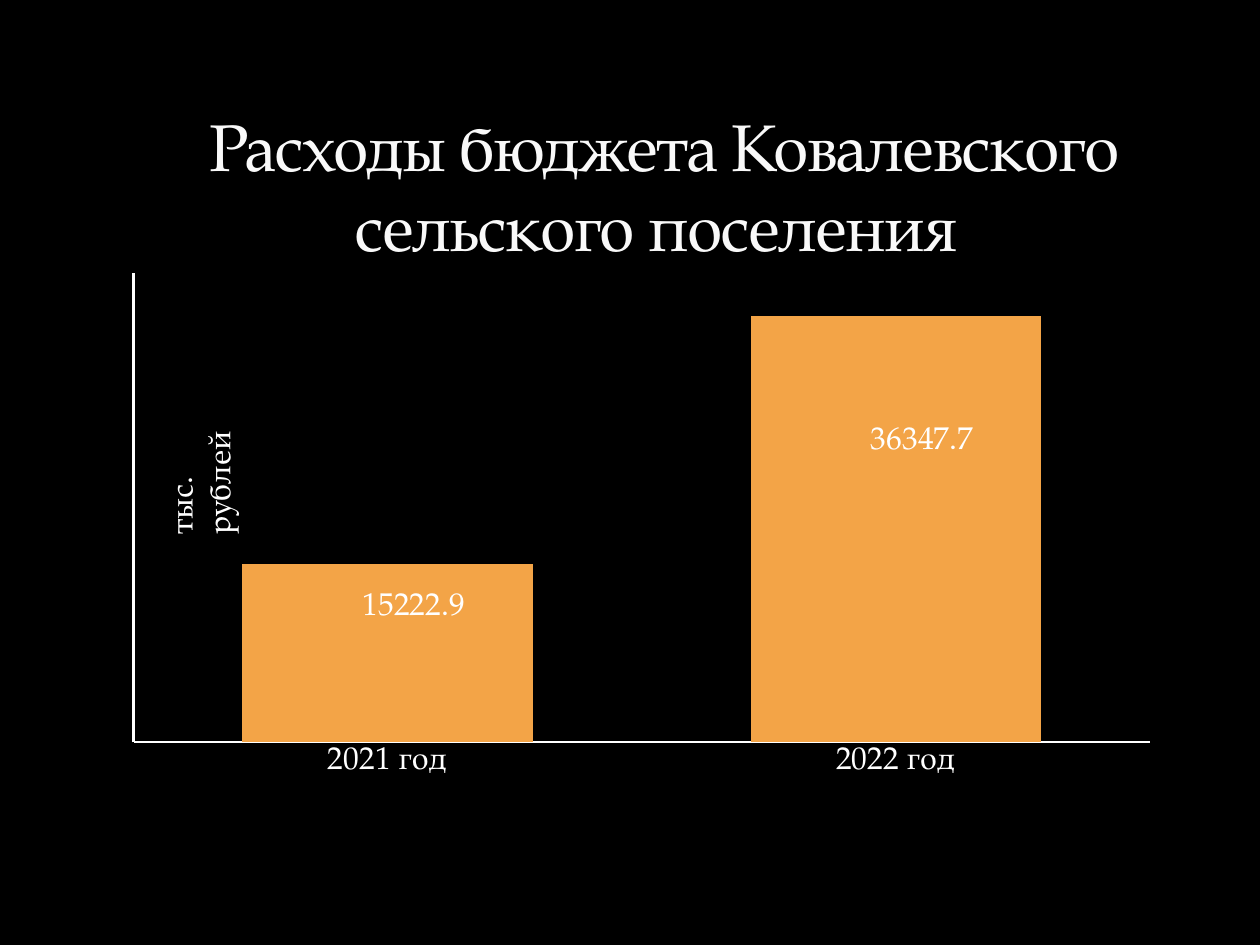
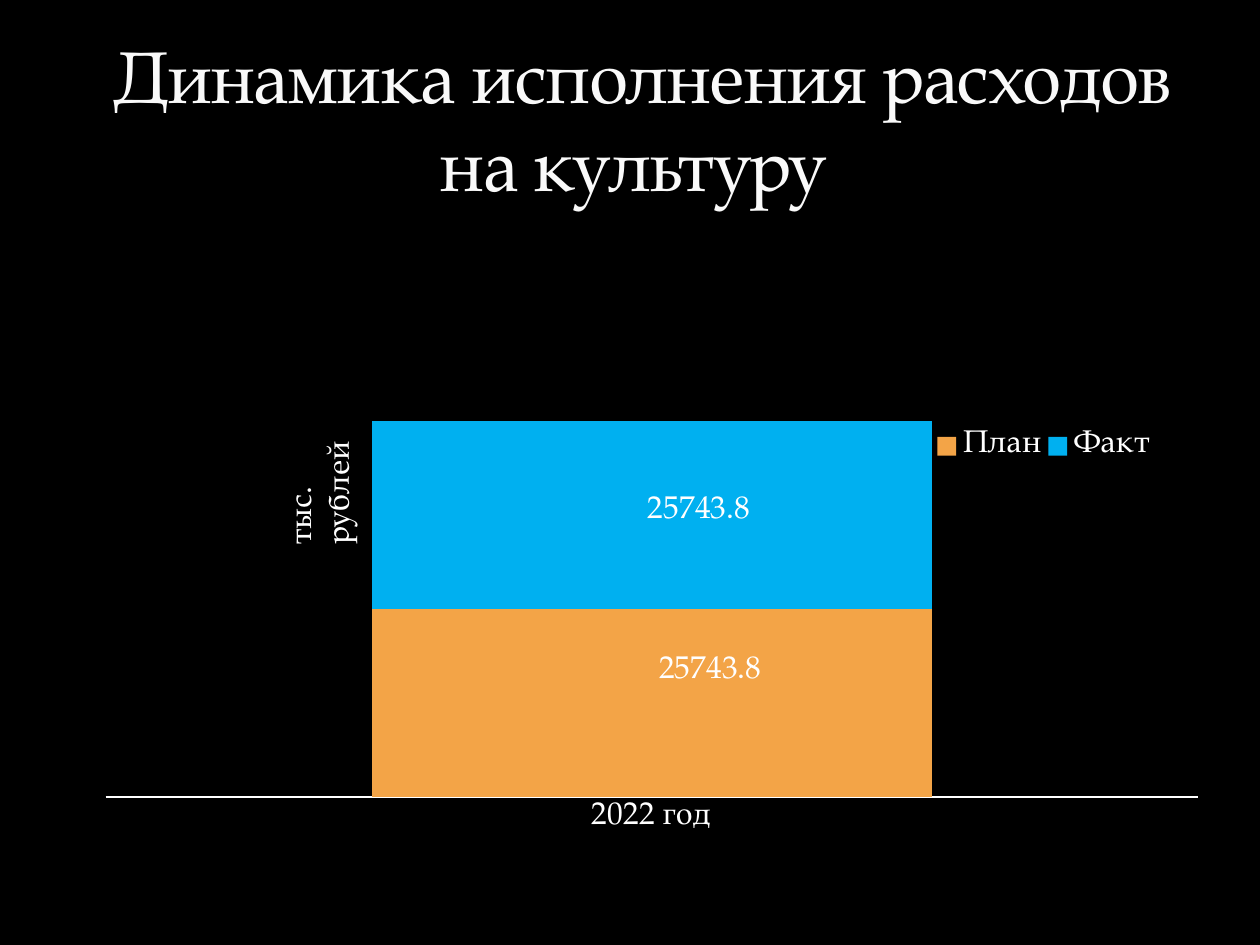
from lxml import etree
from pptx import Presentation
from pptx.chart.data import CategoryChartData
from pptx.dml.color import RGBColor
from pptx.enum.chart import XL_CHART_TYPE, XL_LEGEND_POSITION, XL_TICK_LABEL_POSITION, XL_TICK_MARK
from pptx.enum.text import MSO_ANCHOR, MSO_AUTO_SIZE, PP_ALIGN
from pptx.oxml.ns import qn
from pptx.util import Inches, Pt

BLACK = RGBColor(0x00, 0x00, 0x00)
WHITE = RGBColor(0xFF, 0xFF, 0xFF)
PALE = RGBColor(0xF9, 0xF9, 0xF9)
AMBER = RGBColor(0xF3, 0xA4, 0x47)
BLUE = RGBColor(0x00, 0xB0, 0xF0)

FONT = "TeX Gyre Pagella"
STACKED = XL_CHART_TYPE.COLUMN_STACKED
NO_TICK = XL_TICK_MARK.NONE
NO_LABEL = XL_TICK_LABEL_POSITION.NONE
TOP = XL_LEGEND_POSITION.TOP
BOTTOM = MSO_ANCHOR.BOTTOM
CENTER = PP_ALIGN.CENTER
FIXED = MSO_AUTO_SIZE.NONE


def set_font(font, size=18, color=WHITE):
    font.name = FONT
    font.size = Pt(size)
    font.color.rgb = color


def place(parent, index, **values):
    """Give a chart part a manual layout, as its child number index."""
    old = parent.find(qn("c:layout"))
    if old is not None:
        parent.remove(old)
    layout = etree.Element(qn("c:layout"))
    manual = etree.SubElement(layout, qn("c:manualLayout"))
    for name, value in values.items():
        etree.SubElement(manual, qn("c:" + name)).set("val", str(value))
    parent.insert(index, layout)


def place_box(parent, index, box, **target):
    place(parent, index, **target, xMode="edge", yMode="edge",
          **dict(zip("xywh", box)))


class Deck:
    def __init__(self):
        self.show = Presentation()
        self.show.slide_width = Inches(10)
        self.show.slide_height = Inches(7.5)
        self.slide = None

    def add_slide(self):
        self.slide = self.show.slides.add_slide(self.show.slide_layouts[6])
        fill = self.slide.background.fill
        fill.solid()
        fill.fore_color.rgb = BLACK

    def text(self, text, box, size=18, color=WHITE):
        shape = self.slide.shapes.add_textbox(*map(Inches, box))
        frame = shape.text_frame
        frame.word_wrap = True
        frame.auto_size = FIXED
        frame.text = text
        set_font(frame.paragraphs[0].runs[0].font, size, color)
        return shape

    def title(self, text, box, size):
        frame = self.text(text, box, size, PALE).text_frame
        frame.vertical_anchor = BOTTOM
        par = frame.paragraphs[0]
        par.alignment = CENTER
        par.runs[0].font._element.set("spc", "-100")

    def unit(self, left, top):
        self.text("тыс. рублей", (left, top, 1.46, 0.4)).rotation = 270

    def columns(self, box, years, series, gap, peak, plot_box, shifts):
        """Add stacked columns; series holds (name, values, colour) and
        shifts moves each value label, as a share of the chart."""
        data = CategoryChartData()
        data.categories = years
        for name, values, _ in series:
            data.add_series(name, values)
        frame = self.slide.shapes.add_chart(STACKED, *map(Inches, box), data)
        chart = frame.chart
        chart.has_title = False
        chart.has_legend = False
        set_font(chart.font)

        plot = chart.plots[0]
        plot.gap_width = gap
        plot.overlap = 100
        plot.vary_by_categories = False
        for bars, (_, values, color) in zip(plot.series, series):
            bars.format.fill.solid()
            bars.format.fill.fore_color.rgb = color
            for i, value in enumerate(values):
                if value is not None:
                    set_font(bars.points[i].data_label.font)

        for axis in (chart.category_axis, chart.value_axis):
            axis.major_tick_mark = axis.minor_tick_mark = NO_TICK
            axis.has_major_gridlines = False
            axis.format.line.color.rgb = WHITE
            axis.format.line.width = Pt(1.25)
        chart.value_axis.tick_label_position = NO_LABEL
        chart.value_axis.minimum_scale = 0
        chart.value_axis.maximum_scale = peak

        root = chart.element
        area = next(root.iter(qn("c:plotArea")))
        place_box(area, 0, plot_box, layoutTarget="inner")
        for label, (x, y) in zip(root.iter(qn("c:dLbl")), shifts):
            place(label, 1, x=x, y=y)
        for lead in root.iter(qn("c:showLeaderLines")):
            lead.set("val", "0")
        return chart

    def legend(self, chart, box, skip):
        """Add a legend that leaves out the series number skip."""
        chart.has_legend = True
        chart.legend.position = TOP
        chart.legend.include_in_layout = False
        set_font(chart.legend.font)
        legend = next(chart.element.iter(qn("c:legend")))
        place_box(legend, 1, box)
        entry = etree.Element(qn("c:legendEntry"))
        etree.SubElement(entry, qn("c:idx")).set("val", str(skip))
        etree.SubElement(entry, qn("c:delete")).set("val", "1")
        legend.insert(1, entry)


def budget(deck):
    deck.add_slide()
    deck.columns((0.91, 2.1, 8.35, 4.92), ["2021 год", "2022 год"],
                 [("Series 1", [15222.9, 36347.7], AMBER)],
                 gap=75, peak=40000, plot_box=(0.018, 0.014, 0.966, 0.757),
                 shifts=[(0.025, -0.071), (0.025, -0.139)])
    deck.title("Расходы бюджета Ковалевского сельского поселения ",
               (0.54, 1.55, 9.45, 0.6), 37.8)
    deck.unit(0.7, 3.41)


def culture(deck):
    deck.add_slide()
    chart = deck.columns((0.83, 2.02, 8.98, 4.8), ["2022 год"],
                         [("План", [25743.8], AMBER),
                          ("Столбец1", [None], AMBER),
                          ("Факт", [25743.8], BLUE)],
                         gap=95, peak=60000, plot_box=(0, 0.173, 0.966, 0.724),
                         shifts=[(0.052, -0.052), (0.042, -0.005)])
    chart.value_axis.visible = False
    deck.legend(chart, (0.73, 0.287, 0.2, 0.06), skip=1)
    deck.title("Динамика исполнения расходов на культуру ",
               (0.59, 0.36, 9, 1.33), 42)
    deck.unit(1.64, 3.49)


def main():
    deck = Deck()
    budget(deck)
    culture(deck)
    deck.show.save("out.pptx")


if __name__ == "__main__":
    main()
